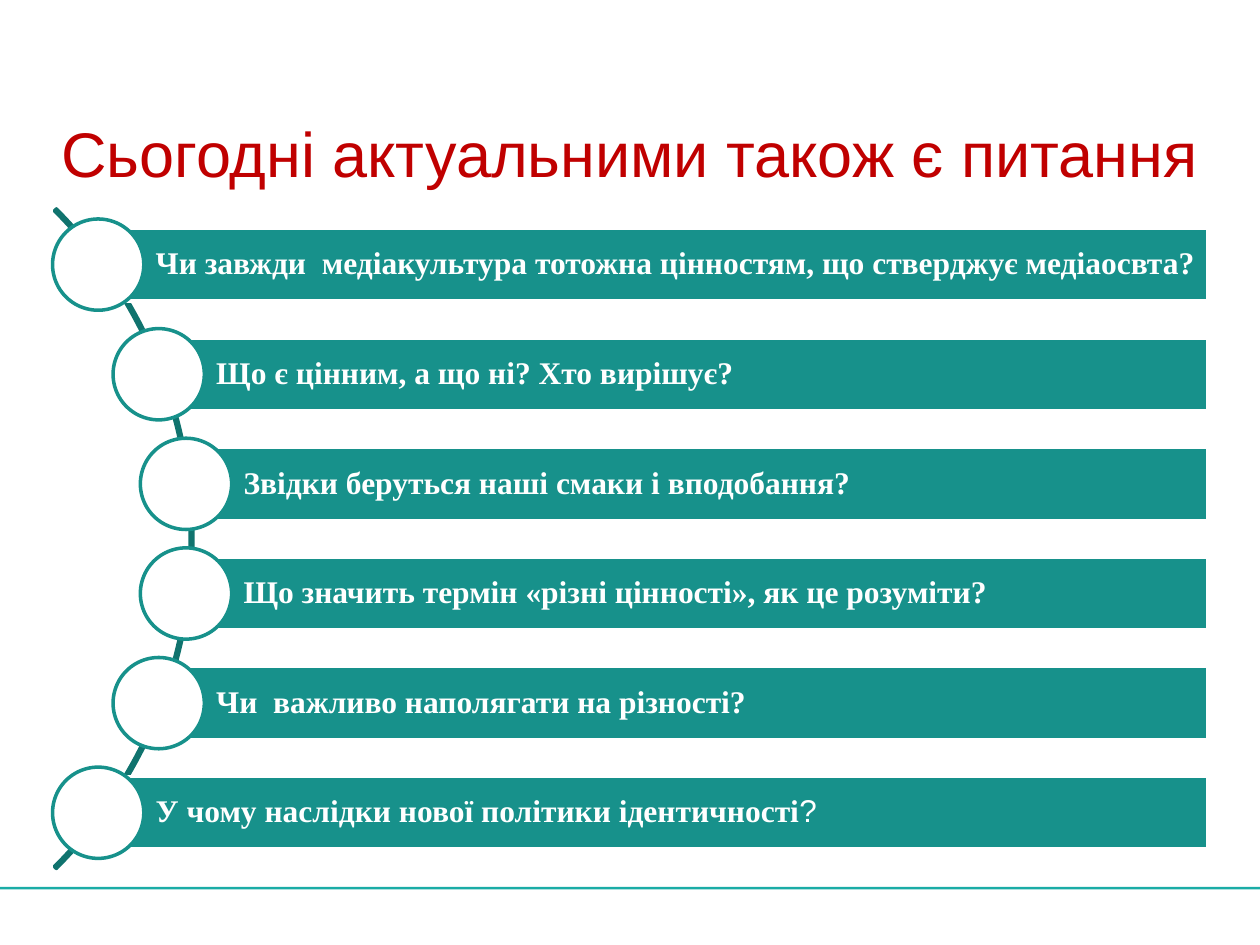
from pptx import Presentation
from pptx.dml.color import RGBColor
from pptx.enum import shapes, text
from pptx.util import Cm, Pt

COLORS = {"teal": "17918B", "dark_teal": "10736E", "rule": "1AACA6",
          "red": "C00000", "white": "FFFFFF"}


def add_run(paragraph, words, font="Times New Roman", size=18, color="white", bold=False):
    run = paragraph.add_run()
    run.text = words
    run.font.name = font
    run.font.size = Pt(size)
    run.font.bold = bold
    run.font.color.rgb = RGBColor.from_string(COLORS[color])


def add_figure(kind, left, top, width, height, fill, line=None):
    figure = slide.shapes.add_shape(kind, Cm(left), Cm(top), Cm(width), Cm(height))
    figure.shadow.inherit = False
    figure.fill.solid()
    figure.fill.fore_color.rgb = RGBColor.from_string(COLORS[fill])
    if line:
        figure.line.color.rgb = RGBColor.from_string(COLORS[line])
        figure.line.width = Pt(2)
    else:
        figure.line.fill.background()
    return figure


prs = Presentation()
prs.slide_width, prs.slide_height = Cm(25.4), Cm(19.05)
slide = prs.slides.add_slide(prs.slide_layouts[5])

# Rule at the foot of the slide
add_figure(shapes.MSO_SHAPE.RECTANGLE, 0, 17.88, 25.4, 0.05, "rule")

# Title
title = slide.shapes.title
title.left, title.top, title.width, title.height = Cm(0.86), Cm(1.65), Cm(23.67), Cm(2.31)
heading = title.text_frame
heading.auto_size = text.MSO_AUTO_SIZE.NONE
heading.vertical_anchor = text.MSO_ANCHOR.BOTTOM
heading.paragraphs[0].alignment = text.PP_ALIGN.CENTER
heading.paragraphs[0].line_spacing = 0.85
add_run(heading.paragraphs[0], "Сьогодні актуальними також є питання",
        font="Arial", size=36, color="red")

# Arc that carries the questions, from -45 to 45 degrees
middle = 10.86
diameter = 18.8
arc = add_figure(shapes.MSO_SHAPE.BLOCK_ARC, -14.91, middle - diameter / 2,
                 diameter, diameter, "dark_teal", "dark_teal")
arc.adjustments[0] = 189  # 315 degrees, in units of 100000/60000 degree
arc.adjustments[1] = 27  # 45 degrees
arc.adjustments[2] = 0.0029

# Questions: a bar that starts at the centre of its circle
questions = [
    (1.98, "Чи завжди  медіакультура тотожна цінностям, що стверджує медіаосвта?", ""),
    (3.2, "Що є цінним, а що ні? Хто вирішує?", ""),
    (3.75, "Звідки беруться наші смаки і вподобання?", ""),
    (3.75, "Що значить термін «різні цінності», як це розуміти?", ""),
    (3.2, "Чи  важливо наполягати на різності?", ""),
    (1.98, "У чому наслідки нової політики ідентичності", "?"),
]
pitch, bar_height, circle_size, bar_right = 2.21, 1.47, 1.84, 24.34

for row, (center_x, question, ending) in enumerate(questions):
    center_y = middle + (row - (len(questions) - 1) / 2) * pitch
    bar = add_figure(shapes.MSO_SHAPE.RECTANGLE, center_x, center_y - bar_height / 2,
                     bar_right - center_x, bar_height, "teal", "white")
    frame = bar.text_frame
    frame.word_wrap = True
    frame.vertical_anchor = text.MSO_ANCHOR.MIDDLE
    frame.margin_left = Cm(1.16)
    frame.margin_right = frame.margin_top = frame.margin_bottom = Cm(0.12)
    paragraph = frame.paragraphs[0]
    paragraph.alignment = text.PP_ALIGN.LEFT
    paragraph.line_spacing = 0.9
    add_run(paragraph, question, bold=True)
    if ending:
        add_run(paragraph, ending, font="Arial")
    add_figure(shapes.MSO_SHAPE.OVAL, center_x - circle_size / 2, center_y - circle_size / 2,
               circle_size, circle_size, "white", "teal")

prs.save("out.pptx")
